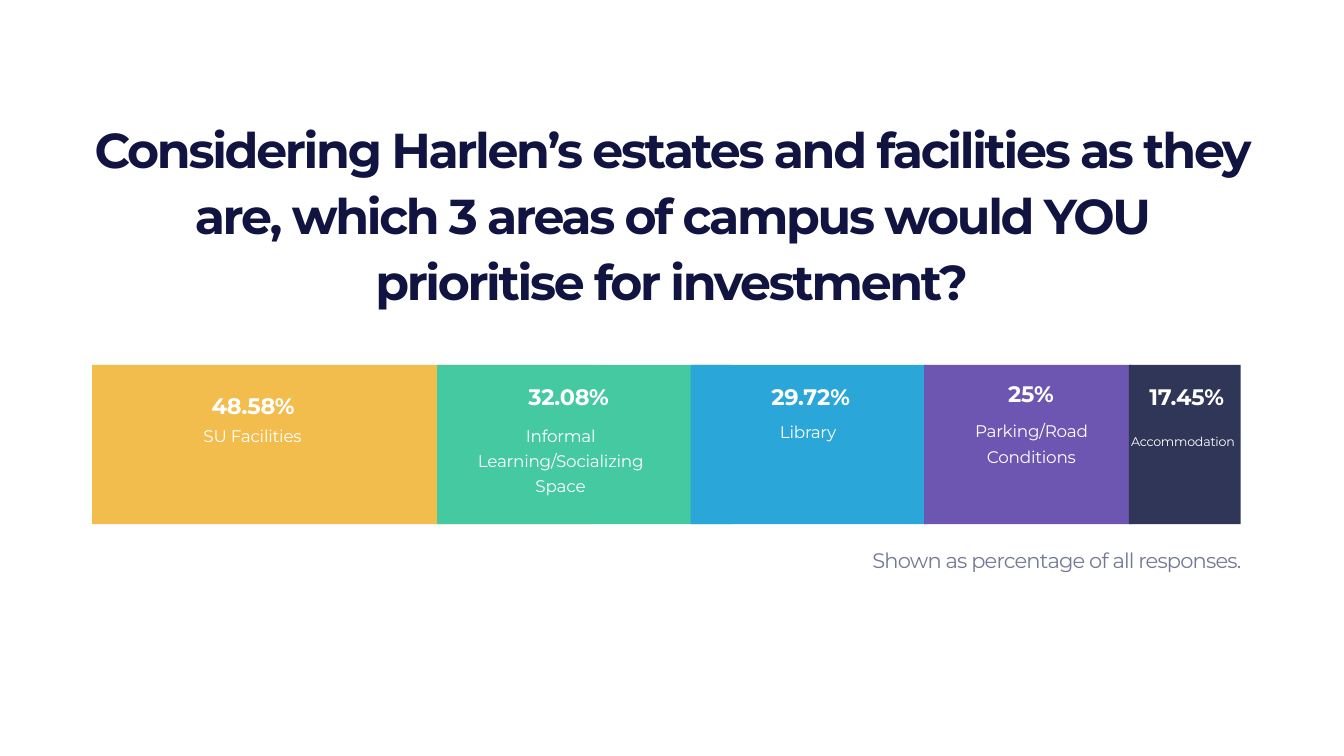
"""Build a slide showing campus investment priorities as a segmented bar."""
from dataclasses import dataclass

from pptx import Presentation
from pptx.dml.color import RGBColor
from pptx.enum.shapes import MSO_SHAPE
from pptx.enum.text import MSO_ANCHOR, MSO_AUTO_SIZE, PP_ALIGN
from pptx.util import Pt

RECTANGLE = MSO_SHAPE.RECTANGLE
TOP, BOTTOM = MSO_ANCHOR.TOP, MSO_ANCHOR.BOTTOM
CENTER = PP_ALIGN.CENTER
GROW = MSO_AUTO_SIZE.SHAPE_TO_FIT_TEXT
INSET = Pt(4)


@dataclass(frozen=True)
class Theme:
    font: str = "Montserrat"
    ink: str = "111340"
    white: str = "FFFFFF"
    muted: str = "747A94"
    yellow: str = "F3BD4E"
    green: str = "45C9A0"
    blue: str = "2AA7D8"
    purple: str = "6C56B2"
    navy: str = "303657"
    title_size: int = 70
    value_size: int = 32
    note_size: int = 30
    label_size: int = 24
    small_size: int = 18


def write(box, area, text, size, color, bold=False, anchor=TOP, leading=None, tracking=-0.3):
    box.left, box.top, box.width, box.height = [Pt(length) for length in area]
    frame = box.text_frame
    frame.margin_left = frame.margin_right = INSET
    frame.margin_top = frame.margin_bottom = INSET
    frame.word_wrap = True
    frame.auto_size = GROW
    frame.vertical_anchor = anchor
    para = frame.paragraphs[0]
    para.alignment = CENTER
    if leading:
        para.line_spacing = Pt(leading)
    span = para.add_run()
    span.text = text
    span.font.name = theme.font
    span.font.size = Pt(size)
    span.font.bold = bold
    span.font.color.rgb = RGBColor.from_string(color)
    span._r.get_or_add_rPr().set("spc", str(round(tracking * 100)))


theme = Theme()
deck = Presentation()
deck.slide_width, deck.slide_height = Pt(1919.52), Pt(1080)
page = deck.slides.add_slide(deck.slide_layouts[5])

BAR_TOP, BAR_HEIGHT = 521.28, 227.52
VALUE_HEIGHT, LABEL_LEADING = 46, 36

segments = [
    (131.76, 715.68, theme.yellow, "48.58%", (217.44, 555.84, 288),
     "SU Facilities", (216.72, 596.88, 288, 40.32), theme.label_size),
    (624.24, 420.48, theme.green, "32.08%", (668.16, 544.32, 288),
     "Informal Learning/Socializing Space", (656.64, 596.88, 288, 113.04), theme.label_size),
    (986.4, 337.68, theme.blue, "29.72%", (1013.76, 544.32, 288),
     "Library", (1010.16, 591.12, 288, 40.32), theme.label_size),
    (1319.76, 297.36, theme.purple, "25%", (1397.52, 540, 149.76),
     "Parking/Road Conditions", (1384.56, 590.4, 177.12, 77.04), theme.label_size),
    (1612.08, 159.84, theme.navy, "17.45%", (1595.52, 544.32, 198.72),
     "Accommodation", (1579.68, 601.92, 219.6, 38.88), theme.small_size),
]

for left, width, color, *_ in segments:
    bar = page.shapes.add_shape(RECTANGLE, Pt(left), Pt(BAR_TOP), Pt(width), Pt(BAR_HEIGHT))
    bar.shadow.inherit = False
    bar.fill.solid()
    bar.fill.fore_color.rgb = RGBColor.from_string(color)
    bar.line.fill.background()

write(page.shapes.title, (119.52, 161.28, 1679.76, 285.84),
      "Considering Harlen’s estates and facilities as they are, "
      "which 3 areas of campus would YOU prioritise for investment?",
      theme.title_size, theme.ink, bold=True, anchor=BOTTOM, leading=94, tracking=-3.3)

for _, _, _, value, value_area, label, label_area, label_size in segments:
    value_box = page.shapes.add_textbox(0, 0, 0, 0)
    write(value_box, (*value_area, VALUE_HEIGHT), value, theme.value_size, theme.white,
          bold=True, anchor=BOTTOM)
    label_box = page.shapes.add_textbox(0, 0, 0, 0)
    write(label_box, label_area, label, label_size, theme.white, leading=LABEL_LEADING)

note_box = page.shapes.add_textbox(0, 0, 0, 0)
write(note_box, (1120.32, 777.6, 778.32, 43.92), "Shown as percentage of all responses.",
      theme.note_size, theme.muted, tracking=-1.2)

deck.save("out.pptx")
